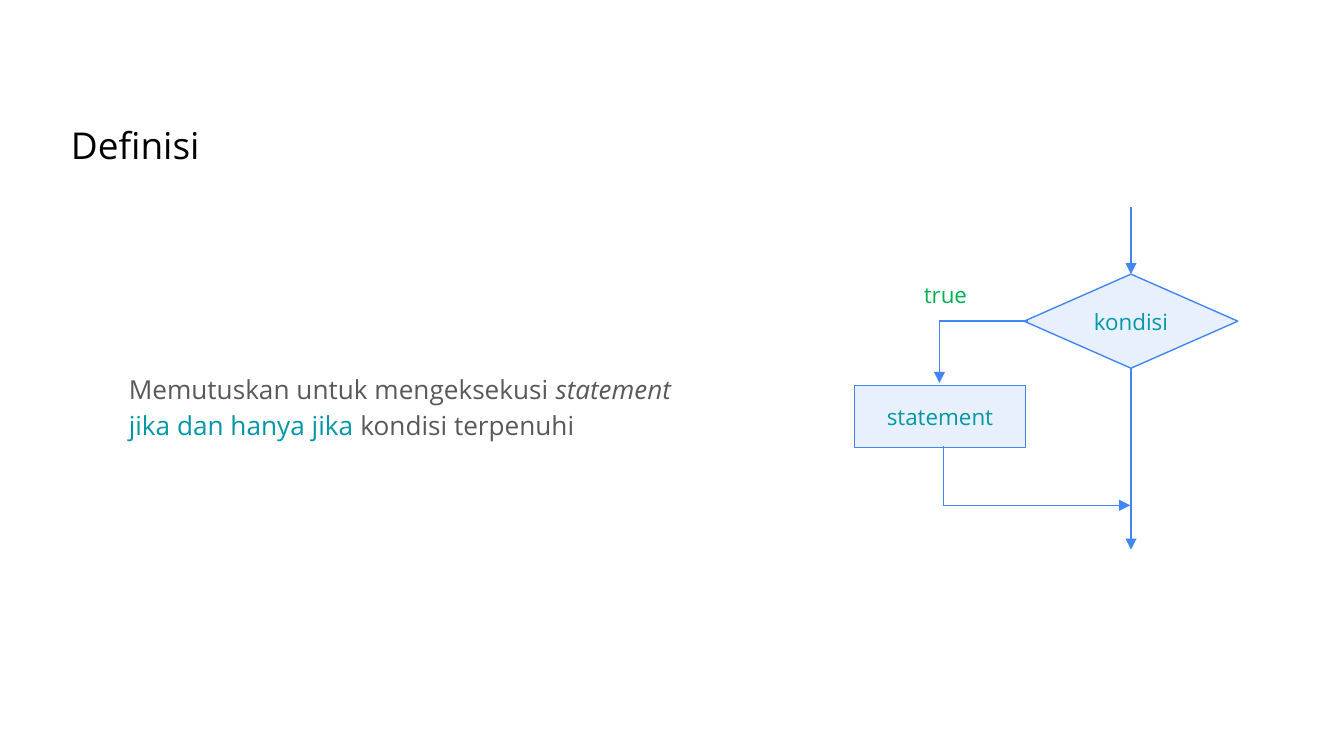
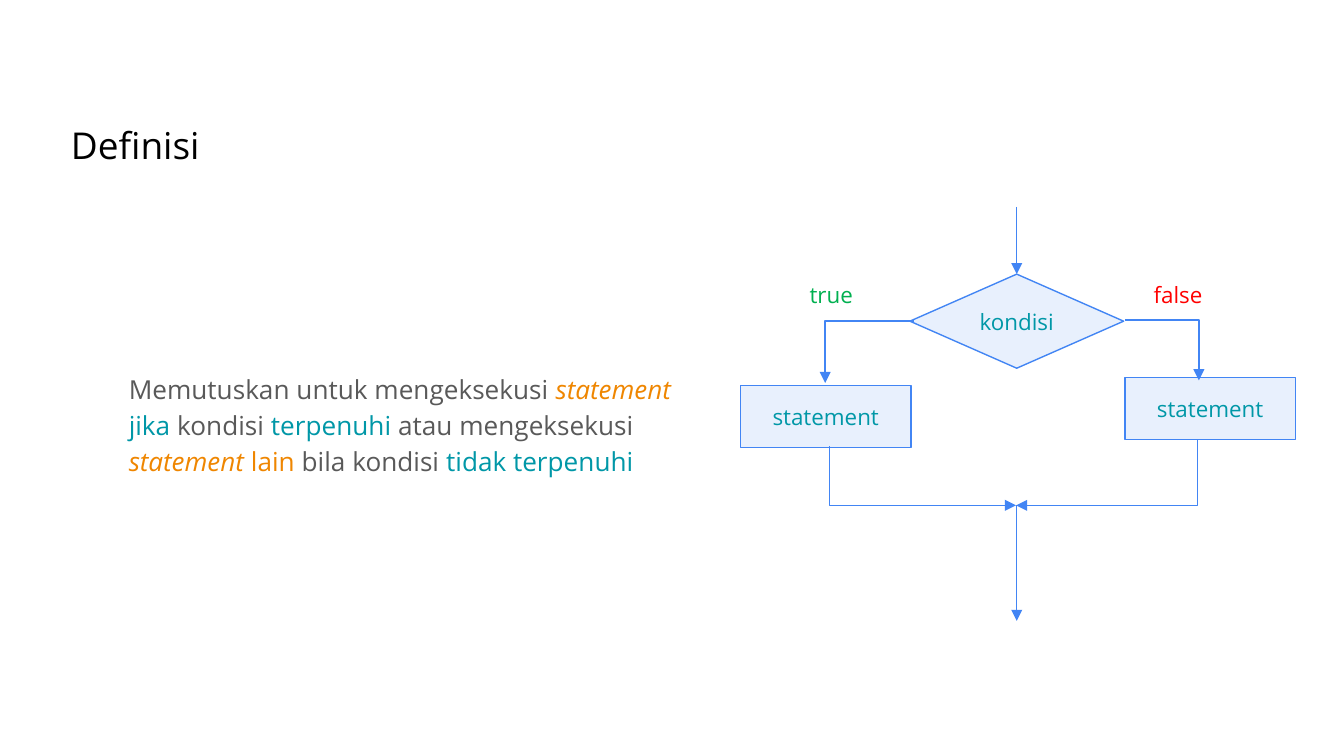
from lxml import etree
from pptx import Presentation
from pptx.dml.color import RGBColor
from pptx.enum.shapes import MSO_CONNECTOR, MSO_SHAPE as SHAPE
from pptx.enum.text import MSO_ANCHOR, PP_ALIGN
from pptx.oxml.ns import qn
from pptx.util import Inches, Pt

FONT = "Open Sans"
BLACK, GRAY, TEAL, ORANGE = "000000", "595959", "0097A7", "EF8600"
GREEN, RED, BLUE, PALE = "00B050", "FF0000", "4285F4", "8EB6F8"
SLIDE_WIDTH = 10
SLIDE_HEIGHT = SLIDE_WIDTH * 9 / 16
TITLE_BOX = (0.43, 0.81, 9.14, 0.43)
BODY_BOX = (0.69, 2.64, 4.57, 1.36)
BODY_INDENT = 0.17

# Flowchart measures; every x is an offset from the chart's vertical axis.
ENTRY_TOP, MERGE_Y = 1.54, 3.76
DECISION = (-0.79, 2.04, 1.59, 0.7)
BOX_SIZE = (1.27, 0.46)
LABEL_TOP, LABEL_SIZE = 2.04, (1.33, 0.31)
TRUE_BRANCH = {
    "label": ("true", GREEN, -2.04),
    "box": (-2.05, 2.87),
    "down": [(-0.76, 2.39), (-1.42, 2.39), (-1.42, 2.85)],
    "merge": [(-1.39, 3.32), (-1.39, MERGE_Y), (0, MERGE_Y)],
}
FALSE_BRANCH = {
    "label": ("false", RED, 0.54),
    "box": (0.81, 2.81),
    "down": [(0.81, 2.38), (1.36, 2.38), (1.36, 2.83)],
    "merge": [(1.35, 3.27), (1.35, MERGE_Y), (0, MERGE_Y)],
}

# Runs are (text, colour, italic).
SLIDES = [
    {
        "title": "Definisi",
        "body": [
            ("Memutuskan untuk mengeksekusi ", GRAY, False),
            ("statement ", GRAY, True),
            ("jika dan hanya jika ", TEAL, False),
            ("kondisi terpenuhi", GRAY, False),
        ],
        "axis": 8.41,
        "branches": [TRUE_BRANCH],
        "exit_from_decision": True,
        "exit_bottom": 4.09,
    },
    {
        "title": "Definisi",
        "body": [
            ("Memutuskan untuk mengeksekusi ", GRAY, False),
            ("statement ", ORANGE, True),
            ("jika ", TEAL, False),
            ("kondisi ", GRAY, False),
            ("terpenuhi", TEAL, False),
            (" atau mengeksekusi ", GRAY, False),
            ("statement ", ORANGE, True),
            ("lain ", ORANGE, False),
            ("bila kondisi ", GRAY, False),
            ("tidak terpenuhi", TEAL, False),
        ],
        "axis": 7.56,
        "branches": [TRUE_BRANCH, FALSE_BRANCH],
        "exit_from_decision": False,
        "exit_bottom": 4.62,
    },
]


def rgb(color):
    return RGBColor.from_string(color)


def add_text(s, box, runs, size):
    tf = s.shapes.add_textbox(*map(Inches, box)).text_frame
    tf.word_wrap = True
    tf.margin_left = tf.margin_right = tf.margin_top = tf.margin_bottom = Inches(0.1)
    p = tf.paragraphs[0]
    p.font.name, p.font.size = FONT, Pt(size)
    for text, color, italic in runs:
        r = p.add_run()
        r.text = text
        r.font.color.rgb = rgb(color)
        r.font.italic = italic
    return p


def add_node(s, kind, box, text, color, filled=True):
    sp = s.shapes.add_shape(kind, *map(Inches, box))
    sp.shadow.inherit = False
    if filled:
        sp.fill.solid()
        sp.fill.fore_color.rgb = rgb(PALE)
        tint = sp.fill._xPr.find(qn("a:solidFill"))[0]
        etree.SubElement(tint, qn("a:alpha"), val="20000")
        sp.line.color.rgb = rgb(BLUE)
        sp.line.width = Pt(0.75)
    else:
        sp.fill.background()
        sp.line.fill.background()
    tf = sp.text_frame
    tf.vertical_anchor = MSO_ANCHOR.MIDDLE
    p = tf.paragraphs[0]
    p.text = text
    p.alignment = PP_ALIGN.CENTER
    p.font.name, p.font.size = FONT, Pt(12)
    p.font.color.rgb = rgb(color)
    return sp


def style_arrow(sp):
    sp.line.color.rgb = rgb(BLUE)
    sp.line.width = Pt(0.75)
    etree.SubElement(sp.line._get_or_add_ln(), qn("a:tailEnd"), type="triangle")


def add_straight_arrow(s, x, top, bottom):
    c = s.shapes.add_connector(
        MSO_CONNECTOR.STRAIGHT, x, Inches(top), x, Inches(bottom))
    style_arrow(c)
    etree.SubElement(c._element.spPr, qn("a:effectLst"))
    return c


def add_elbow_arrow(s, axis, points):
    start, *rest = [(Inches(axis + x), Inches(y)) for x, y in points]
    builder = s.shapes.build_freeform(*start)
    builder.add_line_segments(rest, close=False)
    sp = builder.convert_to_shape()
    sp.shadow.inherit = False
    sp.fill.background()
    style_arrow(sp)


def add_branch(s, axis, branch):
    x, top = branch["box"]
    add_node(s, SHAPE.FLOWCHART_PROCESS, (axis + x, top, *BOX_SIZE), "statement", TEAL)
    add_elbow_arrow(s, axis, branch["down"])
    add_elbow_arrow(s, axis, branch["merge"])
    text, color, x = branch["label"]
    add_node(s, SHAPE.FLOWCHART_PROCESS, (axis + x, LABEL_TOP, *LABEL_SIZE),
             text, color, filled=False)


def add_flowchart(s, content):
    axis = content["axis"]
    x, top, width, height = DECISION
    decision = add_node(s, SHAPE.FLOWCHART_DECISION,
                        (axis + x, top, width, height), "kondisi", TEAL)
    middle = decision.left + decision.width // 2
    add_straight_arrow(s, middle, ENTRY_TOP, top).end_connect(decision, 0)
    for branch in content["branches"]:
        add_branch(s, axis, branch)
    from_decision = content["exit_from_decision"]
    exit_top = top + height if from_decision else MERGE_Y
    c = add_straight_arrow(s, middle, exit_top, content["exit_bottom"])
    if from_decision:
        c.begin_connect(decision, 2)


def main():
    prs = Presentation()
    prs.slide_width, prs.slide_height = Inches(SLIDE_WIDTH), Inches(SLIDE_HEIGHT)
    for content in SLIDES:
        s = prs.slides.add_slide(prs.slide_layouts[6])
        add_text(s, TITLE_BOX, [(content["title"], BLACK, False)], 19.8)
        p = add_text(s, BODY_BOX, content["body"], 14)
        p.line_spacing = 1.15
        p._p.get_or_add_pPr().set("marL", str(Inches(BODY_INDENT)))
        add_flowchart(s, content)
    prs.save("out.pptx")


if __name__ == "__main__":
    main()
